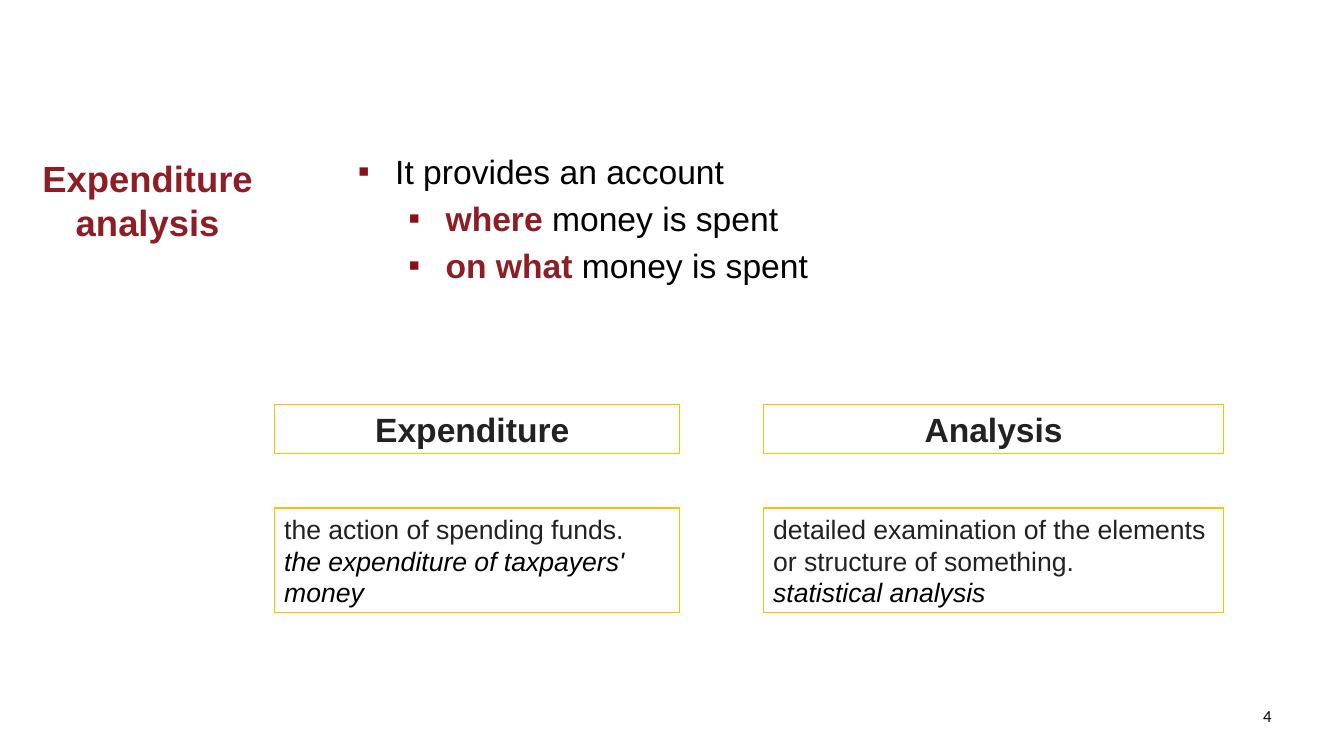
from pptx import Presentation
from pptx.dml.color import RGBColor
from pptx.enum.shapes import MSO_SHAPE as Shape
from pptx.enum.text import MSO_ANCHOR as Anchor, PP_ALIGN as Align
from pptx.oxml import parse_xml
from pptx.oxml.ns import nsdecls
from pptx.util import Pt

PX = 9144
RED, INK, BLACK, GOLD = "8E1E25", "222222", "000000", "FFC000"


def paint(hue):
    """Turn a hex string into a colour."""
    return RGBColor.from_string(hue)


def style(font, size, hue, bold=False, italic=False, face="Arial"):
    """Set the look of a paragraph or run font."""
    font.name, font.size = face, Pt(size)
    font.bold, font.italic = bold, italic
    font.color.rgb = paint(hue)


def write(frame, lines, size, align=Align.LEFT, gap=0, face="Arial"):
    """Fill a frame with lines of (text, colour, bold, italic)."""
    frame.word_wrap = True
    for i, (text, hue, bold, italic) in enumerate(lines):
        para = frame.add_paragraph() if i else frame.paragraphs[0]
        para.text, para.alignment = text, align
        para.space_before = Pt(gap)
        style(para.font, size, hue, bold, italic, face)


def add_text(slide, *area):
    """Add a wrapping text box at an area in px and return its frame."""
    frame = slide.shapes.add_textbox(*(n * PX for n in area)).text_frame
    frame.word_wrap = True
    return frame


def add_box(slide, area, lines, size, align=Align.LEFT):
    """Add a gold outlined box with text."""
    box = slide.shapes.add_shape(Shape.RECTANGLE, *(n * PX for n in area))
    box.shadow.inherit = False
    box.fill.background()
    box.line.color.rgb = paint(GOLD)
    box.line.width = Pt(0.75)
    box.text_frame.vertical_anchor = Anchor.MIDDLE
    write(box.text_frame, lines, size, align)


def add_point(para, left, runs):
    """Write a square bulleted point from (text, colour, bold) runs."""
    para.space_before = Pt(4.8)
    props = para._p.get_or_add_pPr()
    props.set("marL", str(left * PX))
    props.set("indent", str(-37 * PX))
    ns = nsdecls("a")
    for mark in (f'<a:buClr {ns}><a:srgbClr val="8B0E18"/></a:buClr>',
                 f'<a:buFont {ns} typeface="Arial"/>',
                 f'<a:buChar {ns} char="▪"/>'):
        props.append(parse_xml(mark))
    for text, hue, bold in runs:
        run = para.add_run()
        run.text = text
        style(run.font, 24, hue, bold)


def add_points(slide):
    """Add the list of what the analysis provides."""
    frame = add_text(slide, 302, 103, 1031, 185)
    frame.vertical_anchor = Anchor.BOTTOM
    frame.margin_left = frame.margin_right = 11 * PX
    points = [
        (79, [("It provides an account", BLACK, False)]),
        (129, [("where", RED, True), (" money is spent", BLACK, False)]),
        (129, [("on what ", RED, True), ("money is spent", BLACK, False)]),
    ]
    for i, (left, runs) in enumerate(points):
        para = frame.add_paragraph() if i else frame.paragraphs[0]
        add_point(para, left, runs)


def main():
    """Build and save the slide."""
    deck = Presentation()
    deck.slide_width, deck.slide_height = 1333 * PX, 750 * PX
    slide = deck.slides.add_slide(deck.slide_layouts[6])
    write(add_text(slide, 1195, 695, 76, 39), [("4", BLACK, False, False)],
          12, Align.RIGHT, face="Calibri")
    write(add_text(slide, 21, 150, 251, 325),
          [("Expenditure analysis", RED, True, False)], 26, Align.CENTER, 5.2)
    add_points(slide)
    terms = [
        (272, 402, "Expenditure ", "the action of spending funds.",
         "the expenditure of taxpayers' money"),
        (757, 457, "Analysis",
         "detailed examination of the elements or structure of something.",
         "statistical analysis"),
    ]
    for left, width, term, sense, usage in terms:
        add_box(slide, (left, 401, width, 49),
                [(term, INK, True, False)], 24, Align.CENTER)
        add_box(slide, (left, 504, width, 104),
                [(sense, INK, False, False), (usage, BLACK, False, True)], 19)
    deck.save("out.pptx")


if __name__ == "__main__":
    main()
